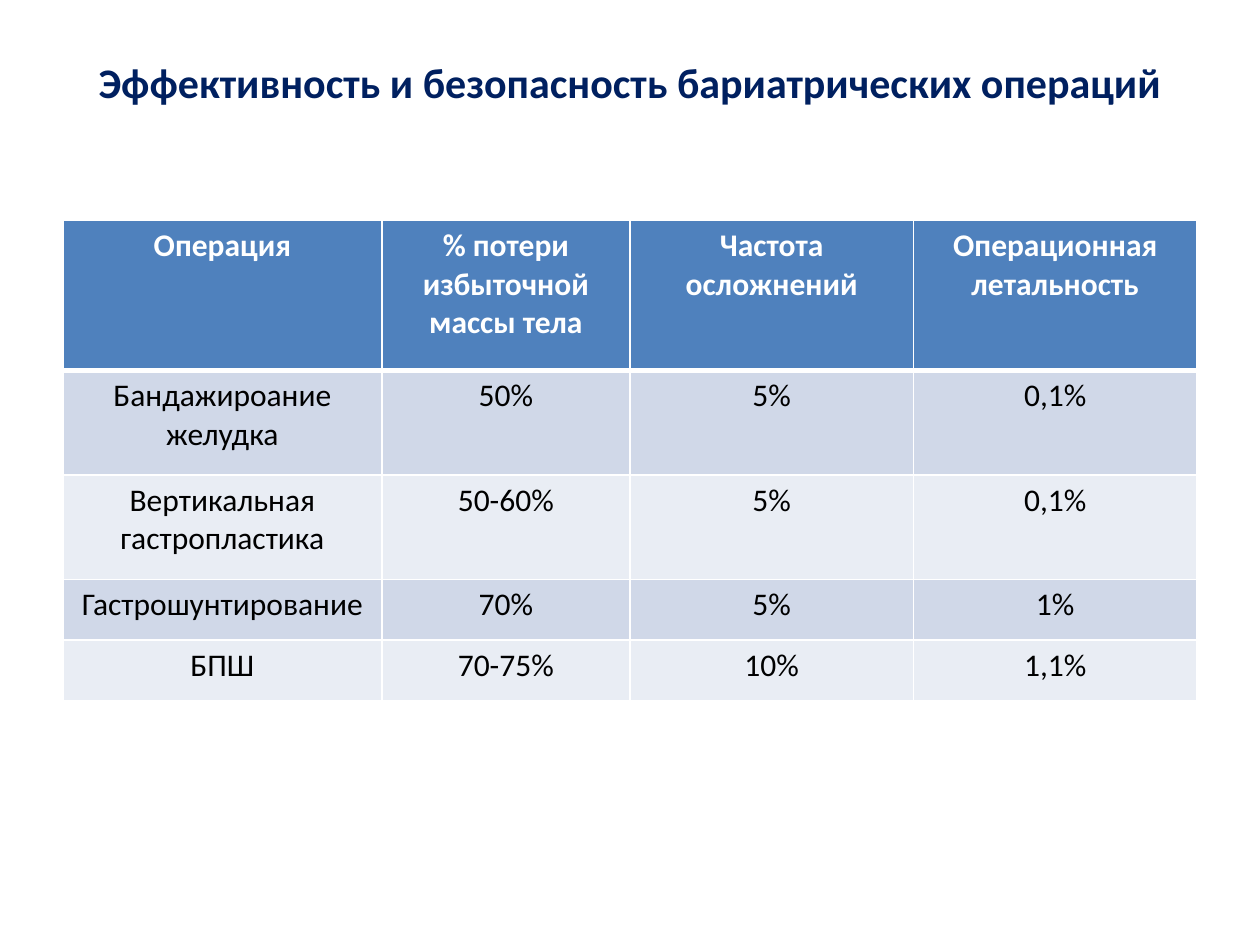
from dataclasses import dataclass

from lxml import etree
from pptx import Presentation
from pptx import util as u
from pptx.dml.color import RGBColor
from pptx.enum import text
from pptx.oxml.ns import qn


@dataclass(frozen=True)
class Theme:
    font: str = "Calibri"
    navy: str = "002060"
    head: str = "4F81BD"
    bands: tuple = ("D0D8E8", "E9EDF4")
    white: str = "FFFFFF"
    black: str = "000000"
    title: int = 24
    body: int = 18
    thin: int = 1
    thick: int = 3


ROWS = [
    ("Операция", "% потери избыточной массы тела",
     "Частота осложнений", "Операционная летальность"),
    ("Бандажироание желудка", "50%", "5%", "0,1%"),
    ("Вертикальная гастропластика", "50-60%", "5%", "0,1%"),
    ("Гастрошунтирование", "70%", "5%", "1%"),
    ("БПШ", "70-75%", "10%", "1,1%"),
]
WIDTHS = (2.53, 1.97, 2.25, 2.25)
HEIGHTS = (1.19, 0.83, 0.83, 0.48, 0.48)


class Deck:
    def __init__(self, theme, slide):
        self.theme = theme
        self.slide = slide

    def label(self, frame, words, size, color, bold):
        para = frame.paragraphs[0]
        para.alignment = text.PP_ALIGN.CENTER
        run = para.add_run()
        run.text = words
        font = run.font
        font.name = self.theme.font
        font.size = u.Pt(size)
        font.bold = bold
        font.color.rgb = RGBColor.from_string(color)

    def title(self, words, left, top, width, height):
        box = self.slide.shapes.title
        box.left, box.top = u.Inches(left), u.Inches(top)
        box.width, box.height = u.Inches(width), u.Inches(height)
        frame = box.text_frame
        frame.word_wrap = True
        frame.vertical_anchor = text.MSO_ANCHOR.MIDDLE
        self.label(frame, words, self.theme.title, self.theme.navy, True)

    def edge(self, cell, base, top):
        """Draw the four cell borders; they must come before the fill."""
        thin = self.theme.thin
        props = cell._tc.get_or_add_tcPr()
        sides = (("L", thin), ("R", thin), ("T", top), ("B", base))
        for spot, (side, width) in enumerate(sides):
            line = etree.Element(qn(f"a:ln{side}"), w=str(u.Pt(width)))
            fill = etree.SubElement(line, qn("a:solidFill"))
            etree.SubElement(fill, qn("a:srgbClr"), val=self.theme.white)
            props.insert(spot, line)

    def table(self, rows, widths, heights, left, top):
        look = self.theme
        grid = self.slide.shapes.add_table(
            len(rows), len(widths), u.Inches(left), u.Inches(top),
            u.Inches(sum(widths)), u.Inches(sum(heights))).table
        for col, width in zip(grid.columns, widths):
            col.width = u.Inches(width)
        for i, (row, height) in enumerate(zip(rows, heights)):
            grid.rows[i].height = u.Inches(height)
            head = i == 0
            fill = look.head if head else look.bands[(i - 1) % 2]
            ink = look.white if head else look.black
            base = look.thick if head else look.thin
            over = look.thick if i == 1 else look.thin
            for j, words in enumerate(row):
                cell = grid.cell(i, j)
                cell.fill.solid()
                cell.fill.fore_color.rgb = RGBColor.from_string(fill)
                self.edge(cell, base, over)
                self.label(cell.text_frame, words, look.body, ink, head)


def main():
    show = Presentation()
    show.slide_width, show.slide_height = u.Inches(10), u.Inches(7.5)
    slide = show.slides.add_slide(show.slide_layouts[5])
    deck = Deck(Theme(), slide)
    deck.title("Эффективность и безопасность бариатрических операций",
               0.5, 0.3, 9, 0.69)
    deck.table(ROWS, WIDTHS, HEIGHTS, 0.5, 1.75)
    show.save("out.pptx")


if __name__ == "__main__":
    main()
